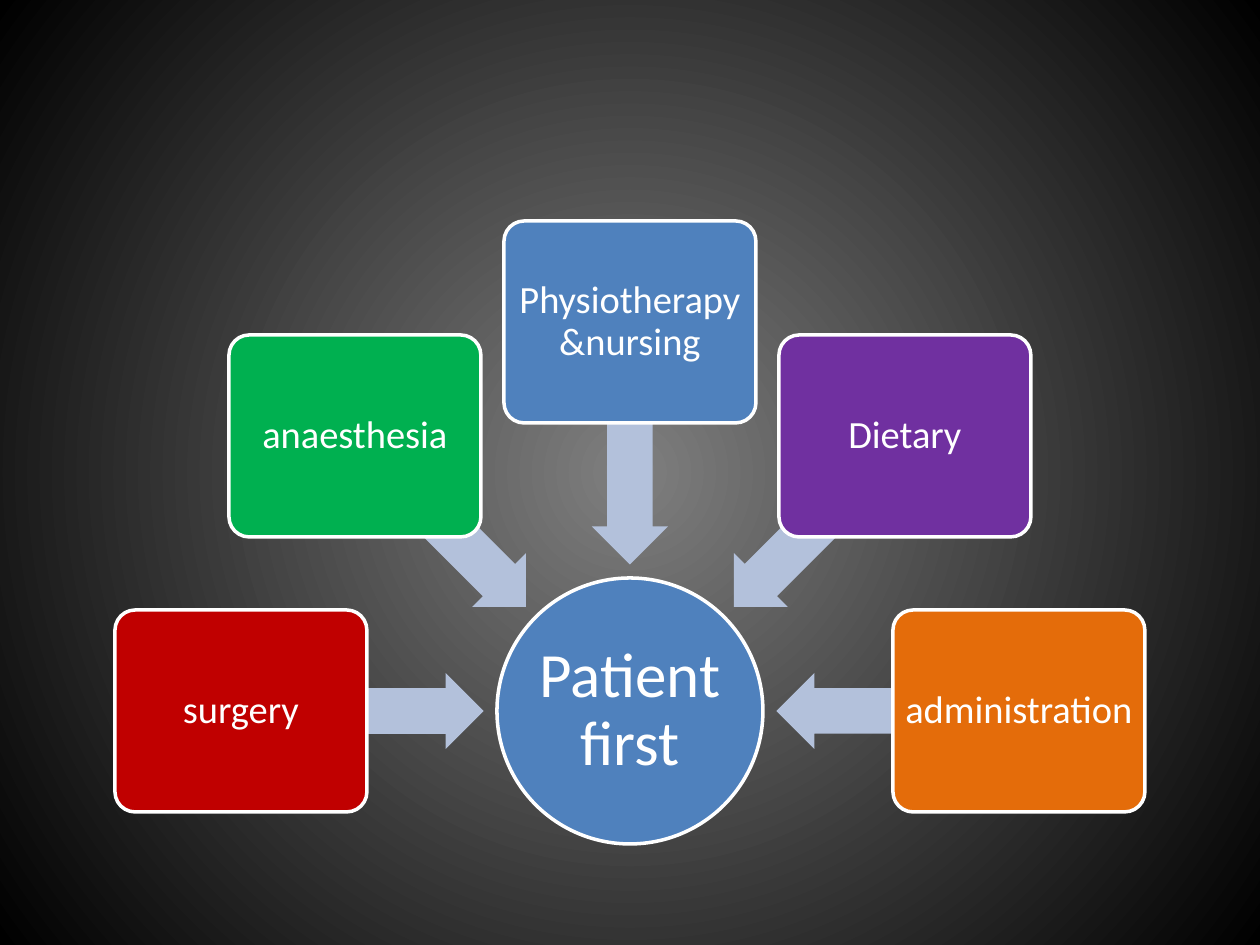
from math import cos, radians, sin

from lxml import etree
from pptx import Presentation
from pptx.dml.color import RGBColor
from pptx.enum.shapes import MSO_SHAPE
from pptx.enum.text import MSO_ANCHOR, PP_ALIGN
from pptx.oxml.ns import qn
from pptx.util import Emu, Pt

PX = 914400 // 126
ELLIPSE = MSO_SHAPE.OVAL
ROUNDED = MSO_SHAPE.ROUNDED_RECTANGLE
LEFT_ARROW = MSO_SHAPE.LEFT_ARROW
MIDDLE = MSO_ANCHOR.MIDDLE
CENTER = PP_ALIGN.CENTER

WHITE = RGBColor(0xFF, 0xFF, 0xFF)
BLACK = RGBColor(0x00, 0x00, 0x00)
GRAY = RGBColor(0x7F, 0x7F, 0x7F)
BLUE = RGBColor(0x4F, 0x81, 0xBD)
PALE_BLUE = RGBColor(0xB3, 0xC1, 0xDB)
RED = RGBColor(0xC0, 0x00, 0x00)
GREEN = RGBColor(0x00, 0xB0, 0x50)
PURPLE = RGBColor(0x70, 0x30, 0xA0)
ORANGE = RGBColor(0xE4, 0x6C, 0x0A)

HUB_X, HUB_Y = 630, 711
HUB_SIZE = 266
BOX_WIDTH, BOX_HEIGHT, BOX_RADIUS = 252, 202, 389
ARROW_WIDTH, ARROW_HEIGHT, ARROW_RADIUS = 243, 76, 268
FIRST_ANGLE, ANGLE_STEP = 180, 45
DEPARTMENTS = [
    ("surgery", RED),
    ("anaesthesia", GREEN),
    ("Physiotherapy &nursing", BLUE),
    ("Dietary", PURPLE),
    ("administration", ORANGE),
]


def around_hub(angle, radius):
    return (HUB_X + round(radius * cos(radians(angle))),
            HUB_Y + round(radius * sin(radians(angle))))


def set_attributes(target, values):
    for name, value in values.items():
        setattr(target, name, value)


class Diagram:
    """Draws the elements of a radial diagram on one slide in a shared style."""

    def __init__(self, slide):
        self.slide = slide
        self.font = {"name": "Calibri"}
        self.paragraph = {"alignment": CENTER, "line_spacing": 0.9}
        self.outline = Pt(2)

    def background(self, inner, outer):
        fill = self.slide.background.fill
        fill.gradient()
        for stop, color, position in zip(fill.gradient_stops, (inner, outer), (0, 1)):
            stop.color.rgb = color
            stop.position = position
        linear = next(self.slide.element.iter(qn("a:lin")))
        circle = etree.Element(qn("a:path"), path="circle")
        etree.SubElement(circle, qn("a:fillToRect"),
                         dict.fromkeys("ltrb", "50000"))
        linear.getparent().replace(linear, circle)

    def shape(self, kind, center, width, height, color, adjustments=()):
        x, y = center
        shape = self.slide.shapes.add_shape(
            kind, Emu(round((x - width / 2) * PX)), Emu(round((y - height / 2) * PX)),
            Emu(width * PX), Emu(height * PX))
        shape.shadow.inherit = False
        shape.fill.solid()
        shape.fill.fore_color.rgb = color
        shape.line.fill.background()
        for index, value in enumerate(adjustments):
            shape.adjustments[index] = value
        return shape

    def label(self, shape, text, size, inset):
        shape.line.color.rgb = WHITE
        shape.line.width = self.outline
        frame = shape.text_frame
        margins = dict.fromkeys(
            ("margin_left", "margin_top", "margin_right", "margin_bottom"),
            Emu(inset * PX))
        set_attributes(frame, {"word_wrap": True, "vertical_anchor": MIDDLE, **margins})
        paragraph = frame.paragraphs[0]
        paragraph.text = text
        set_attributes(paragraph, self.paragraph)
        font = paragraph.runs[0].font
        set_attributes(font, {**self.font, "size": Pt(size)})
        font.color.rgb = WHITE

    def hub(self, text):
        shape = self.shape(ELLIPSE, (HUB_X, HUB_Y), HUB_SIZE, HUB_SIZE, BLUE)
        self.label(shape, text, size=36, inset=0)

    def arrow(self, angle):
        shape = self.shape(LEFT_ARROW, around_hub(angle, ARROW_RADIUS),
                           ARROW_WIDTH, ARROW_HEIGHT, PALE_BLUE, (0.6, 0.5))
        shape.rotation = angle % 360

    def box(self, text, color, angle):
        shape = self.shape(ROUNDED, around_hub(angle, BOX_RADIUS),
                           BOX_WIDTH, BOX_HEIGHT, color, (0.1,))
        self.label(shape, text, size=22, inset=5)


def main():
    presentation = Presentation()
    presentation.slide_width = Emu(1260 * PX)
    presentation.slide_height = Emu(945 * PX)
    diagram = Diagram(presentation.slides.add_slide(presentation.slide_layouts[6]))
    diagram.background(GRAY, BLACK)
    diagram.hub("Patient first")
    for index, (text, color) in enumerate(DEPARTMENTS):
        angle = FIRST_ANGLE + index * ANGLE_STEP
        diagram.arrow(angle)
        diagram.box(text, color, angle)
    presentation.save("out.pptx")


if __name__ == "__main__":
    main()
